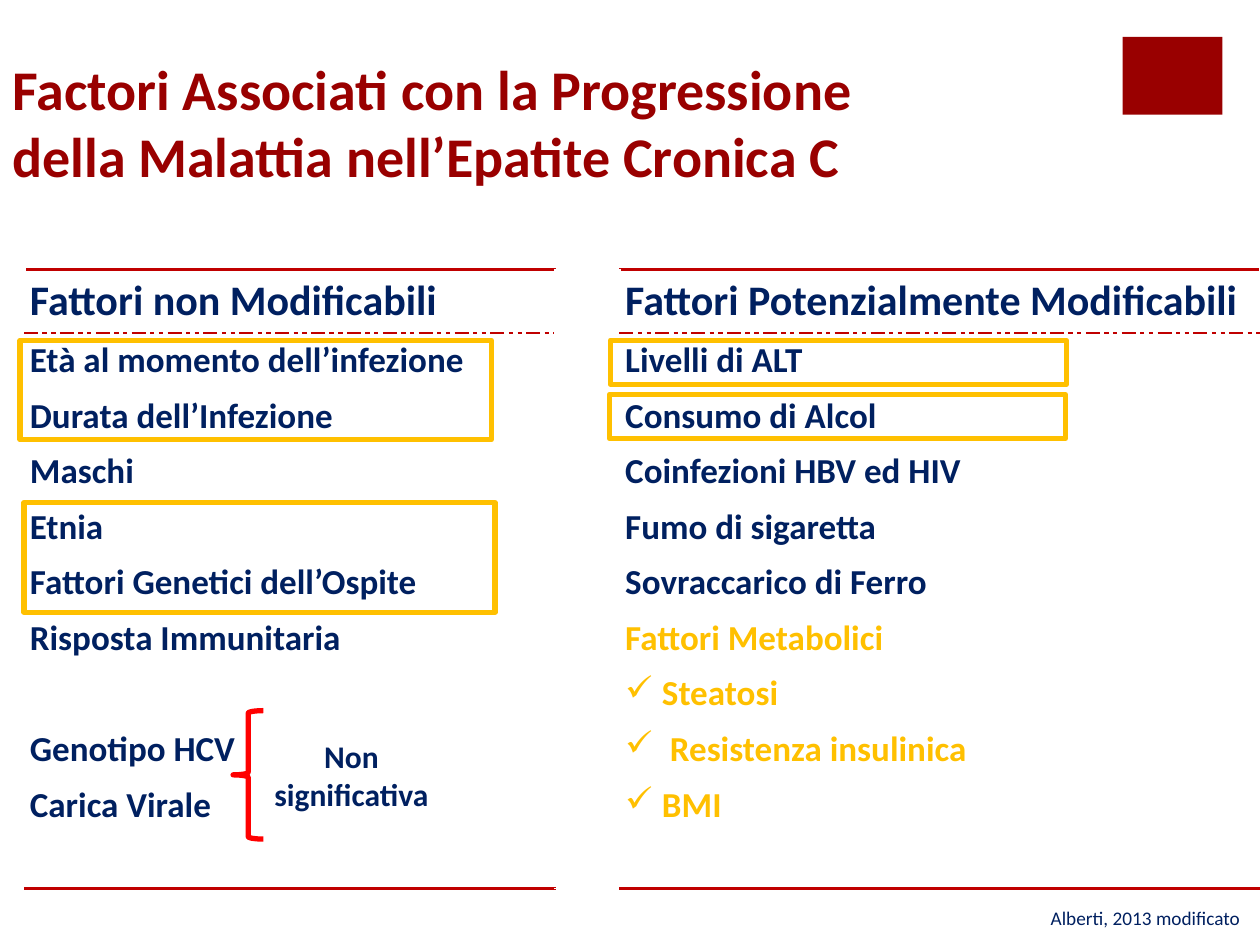
from dataclasses import dataclass
from lxml import etree
from pptx import Presentation
from pptx.dml.color import RGBColor
from pptx.enum.shapes import MSO_SHAPE
from pptx.enum.text import MSO_ANCHOR, PP_ALIGN
from pptx.oxml.ns import qn
from pptx.util import Pt

RECT, BRACE = MSO_SHAPE.RECTANGLE, MSO_SHAPE.LEFT_BRACE
MIDDLE, BOTTOM, TOP = MSO_ANCHOR.MIDDLE, MSO_ANCHOR.BOTTOM, MSO_ANCHOR.TOP
LEFT, CENTER = PP_ALIGN.LEFT, PP_ALIGN.CENTER


@dataclass
class Theme:
    face: str = "Calibri"
    dark: str = "990000"
    rule: str = "C00000"
    navy: str = "002060"
    gold: str = "FFC000"
    red: str = "FF0000"
    white: str = "FFFFFF"
    title: int = 32
    head: int = 24
    body: int = 20
    label: int = 18
    note: int = 11


theme = Theme()


def style(para, size, color, bold=True):
    font = para.font
    font.name, font.size, font.bold = theme.face, Pt(size), bold
    font.color.rgb = RGBColor.from_string(color)


def border(cell, side, color, width, dash):
    line = etree.SubElement(cell._tc.get_or_add_tcPr(), qn("a:ln" + side), w=str(Pt(width)))
    fill = etree.SubElement(line, qn("a:solidFill"))
    etree.SubElement(fill, qn("a:srgbClr"), val=color)
    etree.SubElement(line, qn("a:prstDash"), val=dash)


deck = Presentation()
deck.slide_width, deck.slide_height = Pt(720), Pt(540)
slide = deck.slides.add_slide(deck.slide_layouts[6])
shapes = slide.shapes

block = shapes.add_shape(RECT, Pt(641.5), Pt(21), Pt(57), Pt(44.6))
block.shadow.inherit = False
block.fill.solid()
block.fill.fore_color.rgb = RGBColor.from_string(theme.dark)
block.line.fill.background()

rows = [
    ("Fattori non Modificabili", "Fattori Potenzialmente Modificabili"),
    ("Età al momento dell’infezione", "Livelli di ALT"),
    ("Durata dell’Infezione", "Consumo di Alcol"),
    ("Maschi", "Coinfezioni HBV ed HIV"),
    ("Etnia", "Fumo di sigaretta"),
    ("Fattori Genetici dell’Ospite", "Sovraccarico di Ferro"),
    ("Risposta Immunitaria", "Fattori Metabolici"),
    ("", "Steatosi"),
    ("Genotipo HCV", "Resistenza insulinica"),
    ("Carica Virale", "BMI"),
    ("", ""),
]
indents = {"Steatosi": 21, "Resistenza insulinica": 25.5, "BMI": 21}
last = len(rows) - 1
table = shapes.add_table(len(rows), 3, Pt(14.2), Pt(153.9), Pt(705.8), Pt(353.5)).table
for col, width in zip(table.columns, (303, 37.2, 365.6)):
    col.width = Pt(width)

plain = (theme.white, 1, "solid")
thick = (theme.rule, 2.25, "solid")
dashed = (theme.rule, 1, "sysDashDotDot")
for r, (fixed, open_) in enumerate(rows):
    table.rows[r].height = Pt(31.7 if r else 36.5)
    for c, text in enumerate((fixed, "", open_)):
        cell = table.cell(r, c)
        cell.vertical_anchor = MIDDLE
        cell.margin_left = cell.margin_right = Pt(2.9)
        cell.margin_top = cell.margin_bottom = Pt(3.6)
        edges = dict.fromkeys("LRTB", plain)
        if c != 1:
            if r == 0:
                edges.update(T=thick, B=dashed)
            elif r == 1:
                edges["T"] = dashed
            elif r == last:
                edges["B"] = thick
        for side, edge in edges.items():
            border(cell, side, *edge)
        cell.fill.solid()
        cell.fill.fore_color.rgb = RGBColor.from_string(theme.white)
        para = cell.text_frame.paragraphs[0]
        para.text = text
        color = theme.gold if c == 2 and r >= 6 else theme.navy
        style(para, theme.body if r else theme.head, color)
        if text in indents:
            props = para._p.get_or_add_pPr()
            gap = Pt(indents[text])
            props.set("marL", str(gap))
            props.set("indent", str(-gap))
            mark = etree.Element(qn("a:buChar"), char="✓")
            props.insert(0, mark)

marks = [
    (RECT, 11.5, 194.4, 269.3, 56.9, theme.gold),
    (RECT, 13.7, 287.3, 269.3, 62.6, theme.gold),
    (BRACE, 133.2, 406.1, 17.3, 73.4, theme.red),
    (RECT, 348.8, 194.4, 260.6, 25.2, theme.gold),
    (RECT, 348.2, 225.4, 260.6, 25.2, theme.gold),
]
for kind, x, y, w, h, color in marks:
    mark = shapes.add_shape(kind, Pt(x), Pt(y), Pt(w), Pt(h))
    mark.shadow.inherit = False
    mark.fill.background()
    mark.line.color.rgb = RGBColor.from_string(color)
    mark.line.width = Pt(3)

texts = [
    (["Factori Associati con la Progressione della Malattia nell’Epatite Cronica C"],
     0, 21.6, 512.6, 90, theme.title, theme.dark, True, LEFT, BOTTOM, True),
    (["Non", "significativa"],
     149, 417.6, 103.7, 51.1, theme.label, theme.navy, True, CENTER, TOP, False),
    (["Alberti, 2013 modificato"],
     593.3, 514.1, 123.8, 20.9, theme.note, theme.navy, False, LEFT, TOP, False),
]
for lines, x, y, w, h, size, color, bold, align, anchor, wrap in texts:
    frame = shapes.add_textbox(Pt(x), Pt(y), Pt(w), Pt(h)).text_frame
    frame.word_wrap, frame.vertical_anchor = wrap, anchor
    frame.text = "\n".join(lines)
    for para in frame.paragraphs:
        para.alignment = align
        style(para, size, color, bold)

deck.save("out.pptx")
